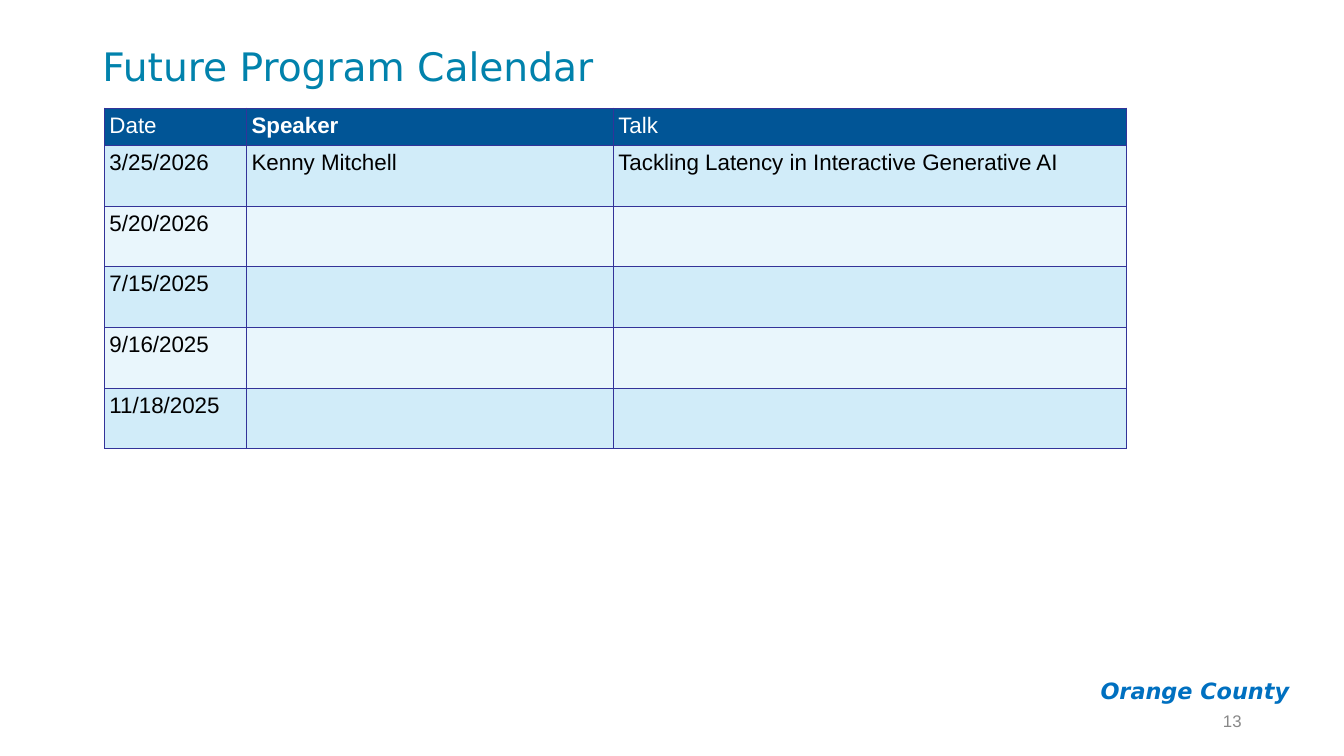
from lxml import etree
from pptx import Presentation
from pptx.dml.color import RGBColor
from pptx.enum.text import MSO_ANCHOR, PP_ALIGN
from pptx.oxml.ns import qn
from pptx.util import Pt

LEFT, RIGHT = PP_ALIGN.LEFT, PP_ALIGN.RIGHT
TOP, MIDDLE = MSO_ANCHOR.TOP, MSO_ANCHOR.MIDDLE
TITLE_ONLY = 5
SANS, BODY = "DejaVu Sans", "Arial"

COLORS = {
    "title": "0182AC",
    "chapter": "0070C0",
    "number": "888888",
    "header": "015596",
    "band_dark": "D1ECF9",
    "band_light": "E9F6FC",
    "border": "333399",
    "white": "FFFFFF",
    "black": "000000",
}

CALENDAR = [
    ["Date", "Speaker", "Talk"],
    ["3/25/2026", "Kenny Mitchell", "Tackling Latency in Interactive Generative AI"],
    ["5/20/2026", "", ""],
    ["7/15/2025", "", ""],
    ["9/16/2025", "", ""],
    ["11/18/2025", "", ""],
]
COL_WIDTHS = [101.5, 262, 366.5]
HEADER_HEIGHT, ROW_HEIGHT = 26.6, 43.35


def rgb(name):
    return RGBColor.from_string(COLORS[name])


def set_font(p, name, size, color, bold=False, italic=False):
    font = p.font
    font.name, font.size = name, Pt(size)
    font.bold, font.italic = bold, italic
    font.color.rgb = rgb(color)


def place(sp, left, top, width, height):
    sp.left, sp.top, sp.width, sp.height = Pt(left), Pt(top), Pt(width), Pt(height)


def set_margins(box, x, y):
    box.margin_left = box.margin_right = Pt(x)
    box.margin_top = box.margin_bottom = Pt(y)


def add_title(slide, text):
    sp = slide.shapes.title
    place(sp, 66, 21, 828, 56)
    tf = sp.text_frame
    tf.vertical_anchor = MIDDLE
    set_margins(tf, 7.2, 3.6)
    p = tf.paragraphs[0]
    p.text, p.alignment, p.line_spacing = text, LEFT, 0.9
    set_font(p, SANS, 28, "title")


def add_footer(slide, text, box, margin_y, anchor, *font, **style):
    tf = slide.shapes.add_textbox(*map(Pt, box)).text_frame
    tf.word_wrap = True
    tf.vertical_anchor = anchor
    set_margins(tf, 7.2, margin_y)
    p = tf.paragraphs[0]
    p.text, p.alignment = text, RIGHT
    set_font(p, *font, **style)


def set_borders(cell):
    tc_pr = cell._tc.get_or_add_tcPr()
    for side in ("lnL", "lnR", "lnT", "lnB"):
        ln = etree.SubElement(tc_pr, qn(f"a:{side}"), w=str(Pt(0.75)))
        fill = etree.SubElement(ln, qn("a:solidFill"))
        etree.SubElement(fill, qn("a:srgbClr"), val=COLORS["border"])


def style_cell(cell, text, fill, color, bold):
    set_borders(cell)
    cell.fill.solid()
    cell.fill.fore_color.rgb = rgb(fill)
    set_margins(cell, 3.6, 3.6)
    cell.vertical_anchor = TOP
    p = cell.text_frame.paragraphs[0]
    p.text = text
    set_font(p, BODY, 16, color, bold)


def add_calendar(slide):
    height = HEADER_HEIGHT + ROW_HEIGHT * (len(CALENDAR) - 1)
    table = slide.shapes.add_table(
        len(CALENDAR), len(COL_WIDTHS),
        Pt(74.6), Pt(77.2), Pt(sum(COL_WIDTHS)), Pt(height),
    ).table
    for column, width in zip(table.columns, COL_WIDTHS):
        column.width = Pt(width)
    for i, row in enumerate(CALENDAR):
        is_header = i == 0
        table.rows[i].height = Pt(HEADER_HEIGHT if is_header else ROW_HEIGHT)
        band = "band_dark" if i % 2 else "band_light"
        fill, color = ("header", "white") if is_header else (band, "black")
        for j, text in enumerate(row):
            style_cell(table.cell(i, j), text, fill, color, text == "Speaker")


def main():
    prs = Presentation()
    prs.slide_width, prs.slide_height = Pt(960), Pt(540)
    slide = prs.slides.add_slide(prs.slide_layouts[TITLE_ONLY])

    # Title and program table
    add_title(slide, "Future Program Calendar")
    add_calendar(slide)

    # Chapter name and slide number
    add_footer(slide, "Orange County", (748, 476.6, 180, 34), 7.2, TOP,
               SANS, 16, "chapter", bold=True, italic=True)
    add_footer(slide, "13", (678, 500.5, 216, 28.75), 3.6, MIDDLE,
               BODY, 12, "number")

    prs.save("out.pptx")


if __name__ == "__main__":
    main()
